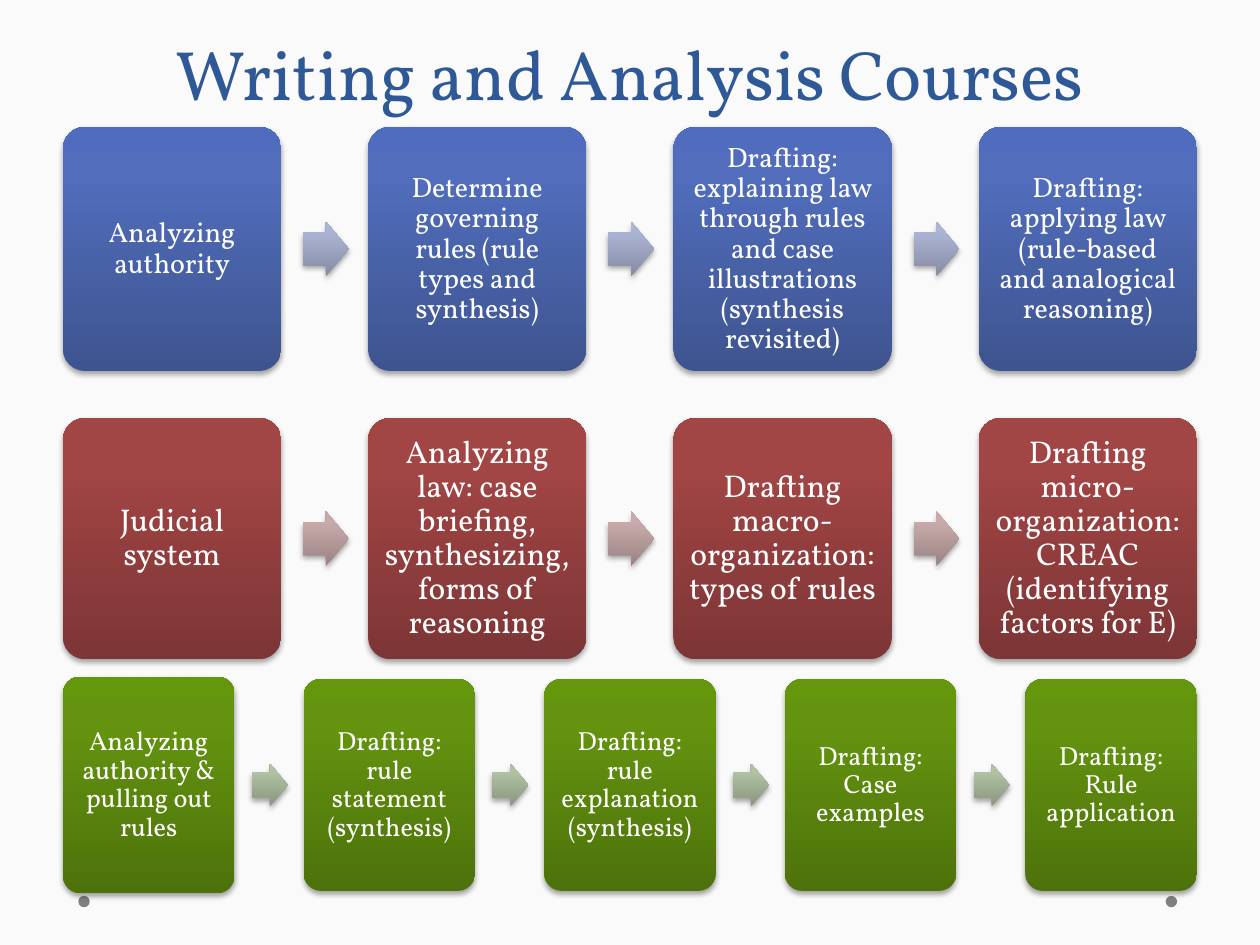
import pptx
import pptx.dml.color
import pptx.enum.shapes
import pptx.enum.text
import pptx.oxml
import pptx.oxml.ns
import pptx.util
from pptx.util import Cm

SHAPES = pptx.enum.shapes.MSO_SHAPE
FONT = "Vollkorn"
COLORS = {
    "background": "FAFAFA",
    "title": "2F5897",
    "dot": "808080",
    "text": "FFFFFF",
    # Gradients run from bottom to top
    "blue": ("3E5490", "516DBB", "4F6CBE"),
    "blue arrow": ("858BA3", "ACB4D4", "ACB5D6"),
    "red": ("7D3535", "A24545", "A44343"),
    "red arrow": ("9A8383", "C8AAAA", "CAAAAA"),
    "green": ("4D720B", "64940F", "65970C"),
    "green arrow": ("89957E", "B1C1A3", "B2C2A3"),
}
ROW_LEFT, ROW_WIDTH = 1.27, 22.86

# One entry per course: colour, top, height, step width, text size, inset, steps
courses = [
    ("blue", 2.56, 4.92, 4.4, 16, 0.17, [
        "Analyzing authority",
        "Determine governing rules (rule types and synthesis)",
        "Drafting: explaining law through rules and case illustrations (synthesis revisited)",
        "Drafting: applying law (rule-based and analogical reasoning)",
    ]),
    ("red", 8.43, 4.86, 4.4, 18, 0.17, [
        "Judicial system",
        "Analyzing law: case briefing, synthesizing, forms of reasoning",
        "Drafting macro-organization: types of rules",
        "Drafting micro-organization: CREAC (identifying factors for E)",
    ]),
    ("green", 13.69, 4.27, 3.46, 15, 0.15, [
        "Analyzing authority & pulling out rules",
        "Drafting: rule statement (synthesis)",
        "Drafting: rule explanation (synthesis)",
        "Drafting: Case examples",
        "Drafting: Rule application",
    ]),
]


def add_glossy(kind, left, top, width, height, colors):
    """Add a shape with a vertical three-stop gradient and a soft shadow."""
    shape = slide.shapes.add_shape(kind, Cm(left), Cm(top), Cm(width), Cm(height))
    namespace = pptx.oxml.ns.nsdecls("a")
    stops = "".join(
        f'<a:gs pos="{pos}"><a:srgbClr val="{color}"/></a:gs>'
        for pos, color in zip((0, 80000, 100000), colors))
    gradient = (f'<a:gradFill {namespace} rotWithShape="1"><a:gsLst>{stops}</a:gsLst>'
                '<a:lin ang="16200000" scaled="0"/></a:gradFill>')
    shadow = (f'<a:effectLst {namespace}><a:outerShdw blurRad="40000" dist="23000" '
              'dir="5400000" rotWithShape="0"><a:srgbClr val="000000">'
              '<a:alpha val="35000"/></a:srgbClr></a:outerShdw></a:effectLst>')
    for xml in (gradient, shadow):
        shape._element.spPr.append(pptx.oxml.parse_xml(xml))
    shape.line.fill.background()
    return shape


def add_text(frame, text, size, color, spacing):
    """Fill a frame with one centred paragraph."""
    paragraph = frame.paragraphs[0]
    paragraph.alignment = pptx.enum.text.PP_ALIGN.CENTER
    paragraph.line_spacing = spacing
    run = paragraph.add_run()
    run.text = text
    run.font.name = FONT
    run.font.size = pptx.util.Pt(size)
    run.font.color.rgb = pptx.dml.color.RGBColor.from_string(color)


# Slide and background
deck = pptx.Presentation()
deck.slide_width, deck.slide_height = Cm(25.4), Cm(19.05)
slide = deck.slides.add_slide(deck.slide_layouts[5])
slide.background.fill.solid()
slide.background.fill.fore_color.rgb = pptx.dml.color.RGBColor.from_string(COLORS["background"])

# Footer dots
for dot_left in (1.58, 23.5):
    dot = slide.shapes.add_shape(SHAPES.OVAL, Cm(dot_left), Cm(18.06), Cm(0.23), Cm(0.23))
    dot.fill.solid()
    dot.fill.fore_color.rgb = pptx.dml.color.RGBColor.from_string(COLORS["dot"])
    dot.line.fill.background()
    dot.shadow.inherit = False

# Title
title = slide.shapes.title
title.left, title.top, title.width, title.height = Cm(ROW_LEFT), Cm(0), Cm(ROW_WIDTH), Cm(2.44)
title.text_frame.auto_size = pptx.enum.text.MSO_AUTO_SIZE.NONE
title.text_frame.vertical_anchor = pptx.enum.text.MSO_ANCHOR.BOTTOM
add_text(title.text_frame, "Writing and Analysis Courses", 40, COLORS["title"], pptx.util.Pt(58))

# Course rows: steps joined by arrows
for name, top, height, width, size, inset, steps in courses:
    pitch = (ROW_WIDTH - width) / (len(steps) - 1)
    arrow_width, arrow_height = width * 0.21, width * 0.25
    for index, text in enumerate(steps):
        left = ROW_LEFT + index * pitch
        # The first green step is slightly taller than the rest
        extra = 0.05 if name == "green" and index == 0 else 0
        step = add_glossy(SHAPES.ROUNDED_RECTANGLE, left, top - extra,
                          width, height + 2 * extra, COLORS[name])
        step.adjustments[0] = 0.1
        frame = step.text_frame
        frame.word_wrap = True
        frame.vertical_anchor = pptx.enum.text.MSO_ANCHOR.MIDDLE
        frame.margin_left = frame.margin_right = Cm(inset)
        frame.margin_top = frame.margin_bottom = Cm(inset)
        add_text(frame, text, size, COLORS["text"], 0.9)
        if index < len(steps) - 1:
            arrow = add_glossy(SHAPES.RIGHT_ARROW, left + width * 1.1,
                               top + (height - arrow_height) / 2,
                               arrow_width, arrow_height, COLORS[name + " arrow"])
            arrow.adjustments[0] = 0.6
            arrow.adjustments[1] = 0.5

deck.save("out.pptx")
